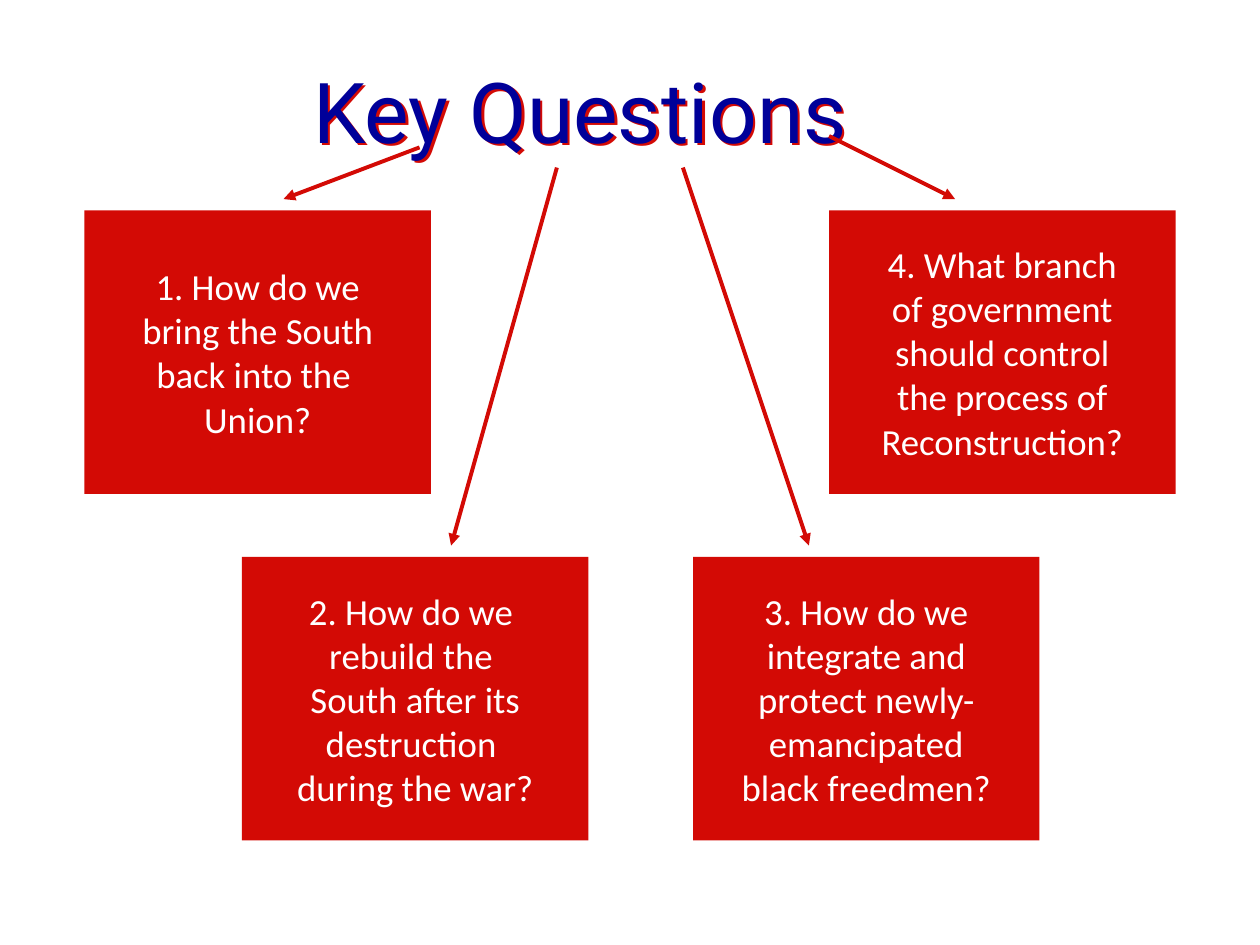
import pptx
import pptx.dml.color
import pptx.enum.dml
import pptx.enum.shapes
import pptx.enum.text
import pptx.oxml
import pptx.oxml.ns
import pptx.util
from pptx.util import Inches

RED, BLUE, WHITE = "D30A05", "000099", "FFFFFF"
BOX_W, BOX_H = 2.75, 2.25
TOP_ROW, BOTTOM_ROW = 1.67, 4.42

QUESTIONS = [
    (0.67, TOP_ROW, "1. How do we\nbring the South\nback into the \nUnion?"),
    (1.92, BOTTOM_ROW, "2. How do we \nrebuild the \nSouth after its\ndestruction \nduring the war?"),
    (5.5, BOTTOM_ROW, "3. How do we\nintegrate and\nprotect newly-\nemancipated\nblack freedmen?"),
    (6.58, TOP_ROW, "4. What branch\nof government\nshould control\nthe process of\nReconstruction?"),
]

ARROWS = [
    (3.33, 1.17, 2.25, 1.58),
    (4.42, 1.33, 3.58, 4.33),
    (5.42, 1.33, 6.42, 4.33),
    (6.58, 1.08, 7.58, 1.58),
]


def rgb(value):
    return pptx.dml.color.RGBColor.from_string(value)


def add_xml(parent, xml):
    ns = pptx.oxml.ns.nsdecls("a")
    parent.append(pptx.oxml.parse_xml(xml.replace(">", f" {ns}>", 1)))


def write_text(tf, text, color, **formats):
    p = tf.paragraphs[0]
    p.text = text
    p.alignment = pptx.enum.text.PP_ALIGN.CENTER
    for r in p.runs:
        r.font.color.rgb = rgb(color)
        for name, value in formats.items():
            setattr(r.font, name, value)


def add_title(slide, text):
    sp = slide.shapes.add_textbox(Inches(0.02), Inches(0.42), Inches(9.17), Inches(0.9))
    tf = sp.text_frame
    tf.word_wrap = True
    tf.auto_size = pptx.enum.text.MSO_AUTO_SIZE.SHAPE_TO_FIT_TEXT
    write_text(tf, text, BLUE, size=pptx.util.Pt(48), name="Roboto")
    add_xml(sp.element.spPr,
            f'<a:effectLst ><a:outerShdw dist="{Inches(0.03)}" dir="2700000" algn="ctr">'
            f'<a:srgbClr val="{RED}"/></a:outerShdw></a:effectLst>')


def add_question(slide, x, y, text):
    sp = slide.shapes.add_shape(pptx.enum.shapes.MSO_SHAPE.RECTANGLE,
                                Inches(x), Inches(y), Inches(BOX_W), Inches(BOX_H))
    sp.shadow.inherit = False
    sp.fill.solid()
    sp.fill.fore_color.rgb = rgb(RED)
    sp.line.fill.background()
    tf = sp.text_frame
    tf.word_wrap = False
    tf.vertical_anchor = pptx.enum.text.MSO_ANCHOR.MIDDLE
    write_text(tf, text, WHITE, size=pptx.util.Pt(21), name="Calibri")


def add_arrow(slide, *points):
    cxn = slide.shapes.add_connector(pptx.enum.shapes.MSO_CONNECTOR.STRAIGHT,
                                     *map(Inches, points))
    cxn.line.color.rgb = rgb(RED)
    cxn.line.width = pptx.util.Pt(2.25)
    add_xml(cxn.line.get_or_change_to_ln() if hasattr(cxn.line, "get_or_change_to_ln")
            else cxn.get_or_add_ln(), '<a:tailEnd type="triangle"></a:tailEnd>')
    add_xml(cxn.element.spPr, "<a:effectLst></a:effectLst>")


def main():
    prs = pptx.Presentation()
    prs.slide_width, prs.slide_height = Inches(10), Inches(7.5)
    slide = prs.slides.add_slide(prs.slide_layouts[6])
    add_title(slide, "Key Questions")
    for question in QUESTIONS:
        add_question(slide, *question)
    for arrow in ARROWS:
        add_arrow(slide, *arrow)
    prs.save("out.pptx")


if __name__ == "__main__":
    main()
